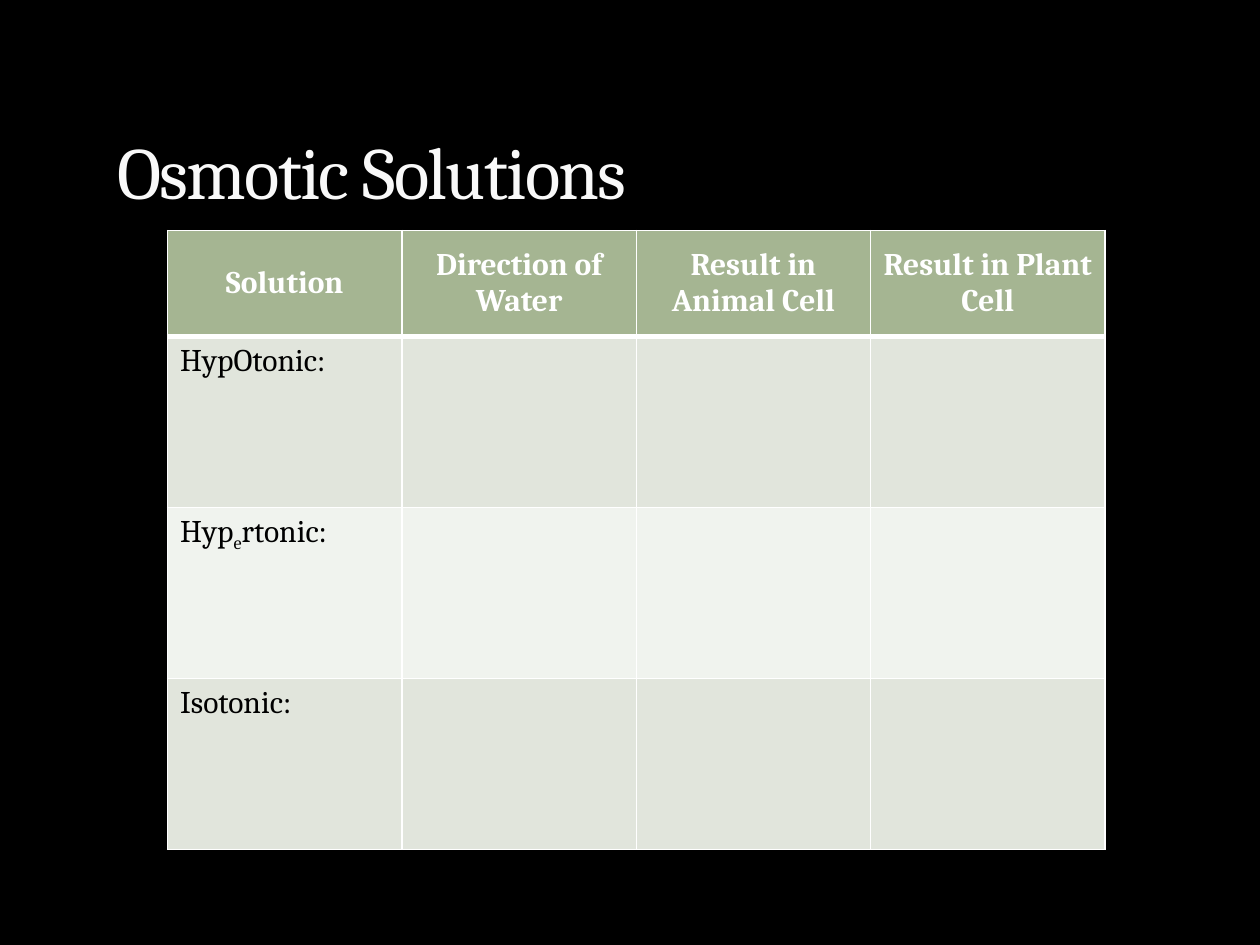
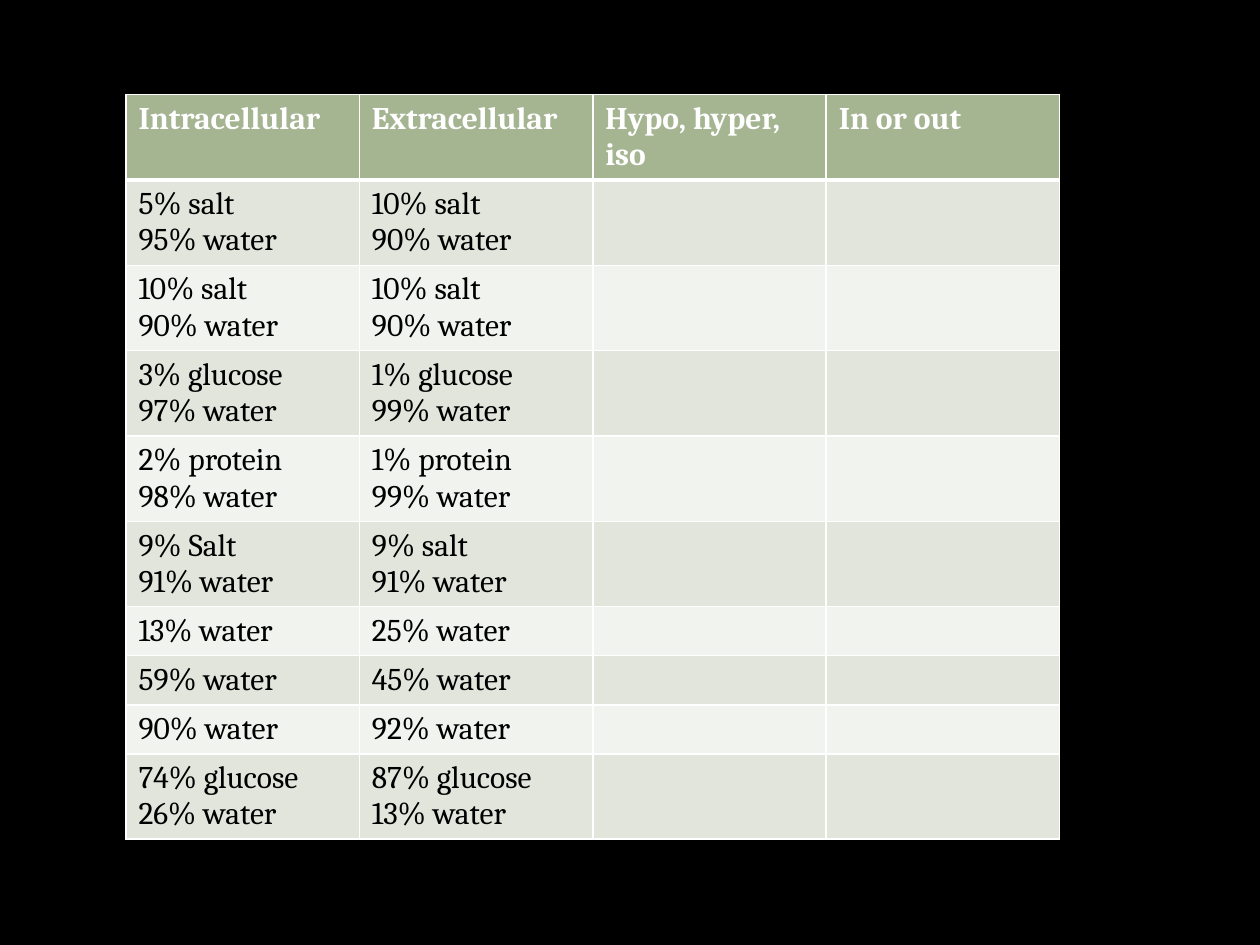
from lxml import etree
from pptx import Presentation
from pptx import util as u
from pptx.dml.color import RGBColor
from pptx.enum import text
from pptx.oxml import parse_xml
from pptx.oxml.ns import nsdecls

COLORS = {
    "background": "000000",
    "title": "F9F9F9",
    "outline": "3C4422",
    "header": "A5B592",
    "header_text": "FFFFFF",
    "body_text": "000000",
    "odd_row": "E1E5DC",
    "even_row": "F0F3EE",
    "border": "FFFFFF",
}
FONT = "Cambria"
TITLE_ONLY, BLANK = 5, 6


def rgb(name):
    return RGBColor.from_string(COLORS[name])


def line_xml(tag, color, points, alpha=100):
    return parse_xml(
        f'<a:{tag} {nsdecls("a")} w="{int(points * 12700)}"><a:solidFill>'
        f'<a:srgbClr val="{COLORS[color]}"><a:alpha val="{alpha * 1000}"/></a:srgbClr>'
        f'</a:solidFill><a:prstDash val="solid"/></a:{tag}>')


class Deck:
    """Style and current slide; lengths are percent of the slide's width or height."""

    def __init__(self):
        self.prs = Presentation()
        self.prs.slide_width, self.prs.slide_height = u.Inches(10), u.Inches(7.5)
        self.slide = None

    def x(self, columns):
        return int(self.prs.slide_width * columns / 100)

    def y(self, rows):
        return int(self.prs.slide_height * rows / 100)

    def new_slide(self, layout):
        self.slide = self.prs.slides.add_slide(self.prs.slide_layouts[layout])
        fill = self.slide.background.fill
        fill.solid()
        fill.fore_color.rgb = rgb("background")

    def style(self, paragraph, size, color, bold=False):
        font = paragraph.font
        font.name, font.size, font.bold = FONT, u.Pt(size), bold
        font.color.rgb = rgb(color)

    def title(self, wording, left, top, width, height):
        heading = self.slide.shapes.title
        heading.left, heading.top = self.x(left), self.y(top)
        heading.width, heading.height = self.x(width), self.y(height)
        frame = heading.text_frame
        frame.text = wording
        frame.auto_size = text.MSO_AUTO_SIZE.NONE
        frame.vertical_anchor = text.MSO_ANCHOR.BOTTOM
        paragraph = frame.paragraphs[0]
        paragraph.alignment = text.PP_ALIGN.LEFT
        self.style(paragraph, 42, "title")
        run_style = paragraph.runs[0]._r.get_or_add_rPr()
        run_style.set("spc", "-100")
        run_style.insert(0, line_xml("ln", "outline", 0.25, alpha=25))

    def table(self, header, body, left, top, width, heights, centred_header=False):
        """Draw a banded table; body rows may be shorter than the header."""
        table = self.slide.shapes.add_table(
            len(body) + 1, len(header), self.x(left), self.y(top),
            self.x(width), self.y(sum(heights))).table
        table.first_row = table.horz_banding = False
        for row, height in zip(table.rows, heights):
            row.height = self.y(height)
        for row, wordings in enumerate([header, *body]):
            for column in range(len(header)):
                wording = wordings[column] if column < len(wordings) else ""
                self.cell(table.cell(row, column), wording, row, centred_header)

    def cell(self, cell, wording, row, centred_header):
        band = "header" if row == 0 else "odd_row" if row % 2 else "even_row"
        cell.fill.solid()
        cell.fill.fore_color.rgb = rgb(band)
        widths = {"lnL": 1, "lnR": 1, "lnT": 3 if row == 1 else 1, "lnB": 3 if row == 0 else 1}
        for place, (side, points) in enumerate(widths.items()):
            cell._tc.get_or_add_tcPr().insert(place, line_xml(side, "border", points))
        for number, line in enumerate(wording.split("\n")):
            frame = cell.text_frame
            paragraph = frame.add_paragraph() if number else frame.paragraphs[0]
            self.style(paragraph, 18, "body_text" if row else "header_text", bold=row == 0)
            self.runs(paragraph, line)
            if centred_header and row == 0:
                paragraph.alignment = text.PP_ALIGN.CENTER
                cell.vertical_anchor = text.MSO_ANCHOR.MIDDLE

    def runs(self, paragraph, line):
        """Write a line, lowering the parts between underscores."""
        for number, part in enumerate(line.split("_")):
            if part:
                run = paragraph.add_run()
                run.text = part
                if number % 2:
                    run._r.get_or_add_rPr().set("baseline", "-25000")


def osmotic_solutions(deck):
    deck.new_slide(TITLE_ONLY)
    deck.table(
        ["Solution", "Direction of Water", "Result in Animal Cell", "Result in Plant Cell"],
        [["HypOtonic:"], ["Hyp_e_rtonic:"], ["Isotonic:"]],
        13.3, 24.4, 74.4, [11.2] + [18.1] * 3, centred_header=True)
    deck.title("Osmotic Solutions", 8.3, 6.67, 76.8, 16.67)


def concentration_practice(deck):
    concentrations = [
        ("5% salt\n95% water", "10% salt\n90% water"),
        ("10% salt\n90% water", "10% salt\n90% water"),
        ("3% glucose\n97% water", "1% glucose\n99% water"),
        ("2% protein\n98% water", "1% protein\n99% water"),
        ("9% Salt\n91% water", "9% salt\n91% water"),
        ("13% water", "25% water"),
        ("59% water", "45% water"),
        ("90% water", "92% water"),
        ("74% glucose\n26% water", "87% glucose\n13% water"),
    ]
    heights = [8.5 if "\n" in inside else 5 for inside, outside in concentrations]
    deck.new_slide(BLANK)
    deck.table(["Intracellular", "Extracellular", "Hypo, hyper, iso", "In or out"],
               concentrations, 10, 10, 74.1, [6.8] + heights)


def main():
    deck = Deck()
    osmotic_solutions(deck)
    concentration_practice(deck)
    deck.prs.save("out.pptx")


if __name__ == "__main__":
    main()
